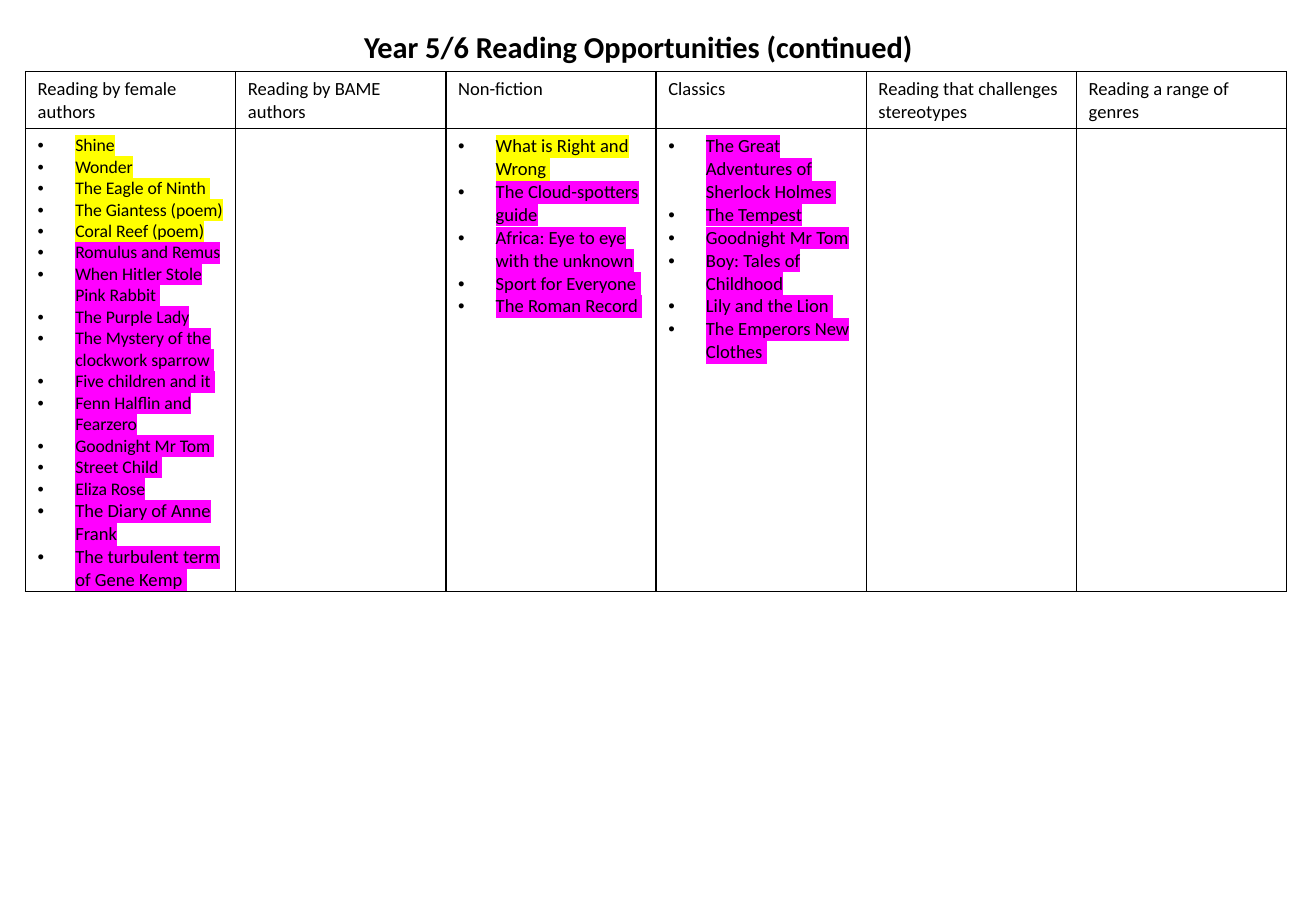
from lxml.etree import SubElement
from pptx import Presentation
from pptx.dml.color import RGBColor
from pptx.enum.text import MSO_AUTO_SIZE as Fit, PP_ALIGN as Align
from pptx.oxml.ns import qn
from pptx.util import Emu, Pt

PX = 9144  # 100 px to the inch
FONT = "Calibri"
BLACK, YELLOW, PINK = "000000", "FFFF00", "FF00FF"
HEADS = ["Reading by female authors", "Reading by BAME authors", "Non-fiction",
         "Classics", "Reading that challenges stereotypes",
         "Reading a range of genres"]
# Column: groups of (highlight, text size, titles)
BOOKS = {
    0: [
        (YELLOW, 10.5, ["Shine", "Wonder", "The Eagle of Ninth ",
                        "The Giantess (poem)", "Coral Reef (poem)"]),
        (PINK, 10.5, ["Romulus and Remus", "When Hitler Stole Pink Rabbit ",
                      "The Purple Lady", "The Mystery of the clockwork sparrow ",
                      "Five children and it ", "Fenn Halflin and Fearzero",
                      "Goodnight Mr Tom ", "Street Child ", "Eliza Rose"]),
        (PINK, 11, ["The Diary of Anne Frank",
                    "The turbulent term of Gene Kemp "]),
    ],
    2: [
        (YELLOW, 11, ["What is Right and Wrong "]),
        (PINK, 11, ["The Cloud-spotters guide",
                    "Africa: Eye to eye with the unknown",
                    "Sport for Everyone ", "The Roman Record "]),
    ],
    3: [
        (PINK, 11, ["The Great Adventures of Sherlock Holmes ", "The Tempest",
                    "Goodnight Mr Tom", "Boy: Tales of Childhood",
                    "Lily and the Lion ", "The Emperors New Clothes "]),
    ],
}


def px(n):
    return Emu(n * PX)


def color(code):
    return RGBColor.from_string(code)


def style(para, size, bold=False, mark=None):
    """Format each run; mark is the highlight colour."""
    for run in para.runs:
        font = run.font
        font.size, font.bold = Pt(size), bold
        font.color.rgb = color(BLACK)
        if mark:
            light = SubElement(run._r.get_or_add_rPr(), qn("a:highlight"))
            SubElement(light, qn("a:srgbClr"), val=mark)
        font.name = FONT


def bullet(para):
    props = para._p.get_or_add_pPr()
    props.set("marL", str(px(31)))
    props.set("indent", str(px(-31)))
    SubElement(props, qn("a:buFont"), typeface="Arial")
    SubElement(props, qn("a:buChar"), char="•")


def border(cell):
    props = cell._tc.get_or_add_tcPr()
    for side in ("lnL", "lnR", "lnT", "lnB"):
        line = SubElement(props, qn(f"a:{side}"), w=str(Pt(1)))
        fill = SubElement(line, qn("a:solidFill"))
        SubElement(fill, qn("a:srgbClr"), val=BLACK)
    cell.fill.background()


def title(slide, x, y, w, h):
    frame = slide.shapes.add_textbox(px(x), px(y), px(w), px(h)).text_frame
    frame.word_wrap = True
    frame.auto_size = Fit.SHAPE_TO_FIT_TEXT
    para = frame.paragraphs[0]
    para.text = "Year 5/6 Reading Opportunities (continued)"
    para.alignment = Align.CENTER
    style(para, 18, bold=True)


def book_list(cell, groups):
    frame = cell.text_frame
    items = [(name, size, mark) for mark, size, names in groups for name in names]
    frame.text = "\n".join(name for name, _, _ in items)
    for para, (_, size, mark) in zip(frame.paragraphs, items):
        bullet(para)
        style(para, size, mark=mark)


def book_table(slide, x, y, w, h):
    head = 47
    cols = len(HEADS)
    table = slide.shapes.add_table(2, cols, px(x), px(y), px(w), px(h)).table
    table.first_row = table.horz_banding = False
    table.rows[0].height, table.rows[1].height = px(head), px(h - head)
    for i, name in enumerate(HEADS):
        table.columns[i].width = px(w // cols)
        top, body = table.cell(0, i), table.cell(1, i)
        border(top)
        border(body)
        top.text_frame.text = name
        style(top.text_frame.paragraphs[0], 11)
        body.margin_bottom = 0
        if i in BOOKS:
            book_list(body, BOOKS[i])


def main():
    deck = Presentation()
    deck.slide_width, deck.slide_height = px(1083), px(750)
    slide = deck.slides.add_slide(deck.slide_layouts[6])
    title(slide, 221, 18, 609, 40)
    book_table(slide, 21, 59, 1038, 428)
    deck.save("out.pptx")


if __name__ == "__main__":
    main()
